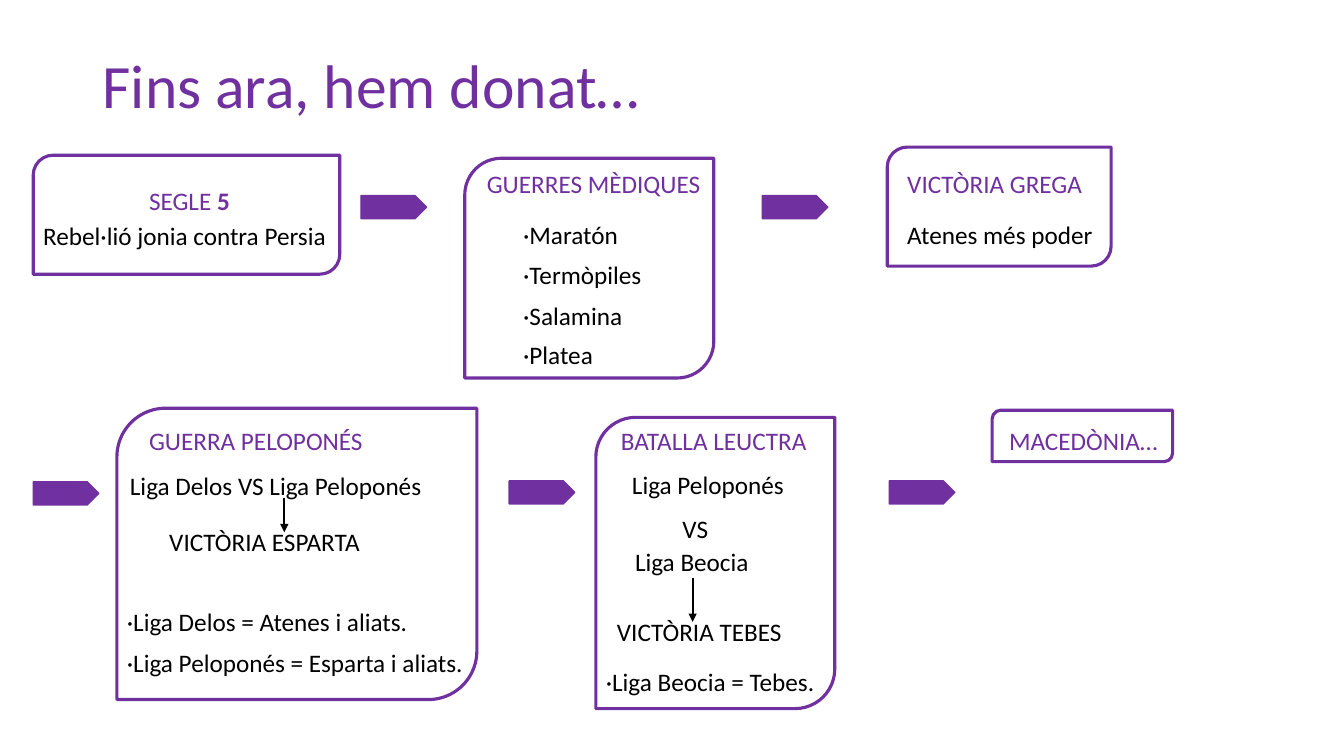
from dataclasses import dataclass

from lxml import etree
from pptx import Presentation
from pptx.dml.color import RGBColor
from pptx.enum.shapes import MSO_CONNECTOR, MSO_SHAPE
from pptx.enum.text import MSO_ANCHOR, MSO_AUTO_SIZE
from pptx.oxml.ns import qn
from pptx.util import Inches, Pt

STRAIGHT = MSO_CONNECTOR.STRAIGHT
FRAME = MSO_SHAPE.ROUND_2_DIAG_RECTANGLE
PENTAGON = MSO_SHAPE.PENTAGON
TOP, MIDDLE = MSO_ANCHOR.TOP, MSO_ANCHOR.MIDDLE
FIT, NO_FIT = MSO_AUTO_SIZE.SHAPE_TO_FIT_TEXT, MSO_AUTO_SIZE.NONE


@dataclass(frozen=True)
class Theme:
    font: str = "Calibri"
    purple: RGBColor = RGBColor(0x70, 0x30, 0xA0)
    black: RGBColor = RGBColor(0, 0, 0)
    title_size: int = 44
    body_size: int = 18


theme = Theme()
prs = Presentation()
prs.slide_width, prs.slide_height = Inches(13.33), Inches(7.5)
slide = prs.slides.add_slide(prs.slide_layouts[6])
shapes = slide.shapes


def add_text(text, left, top, width, height=0.4, size=theme.body_size,
             color=theme.black, bold_end="", anchor=TOP, fit=FIT, spacing=1.0):
    """Write one line of text, optionally ending in a bold part."""
    box = shapes.add_textbox(Inches(left), Inches(top), Inches(width), Inches(height))
    frame = box.text_frame
    frame.word_wrap = True
    frame.auto_size = fit
    frame.vertical_anchor = anchor
    paragraph = frame.paragraphs[0]
    paragraph.line_spacing = spacing
    for part in filter(None, (text, bold_end)):
        run = paragraph.add_run()
        run.text = part
        run.font.name = theme.font
        run.font.size = Pt(size)
        run.font.color.rgb = color
        if part == bold_end:
            run.font.bold = True


def add_purple_shape(kind, left, top, width, height, line_width, filled):
    shape = shapes.add_shape(kind, Inches(left), Inches(top), Inches(width), Inches(height))
    shape.shadow.inherit = False
    shape.line.color.rgb = theme.purple
    shape.line.width = Pt(line_width)
    if filled:
        shape.fill.solid()
        shape.fill.fore_color.rgb = theme.purple
    else:
        shape.fill.background()


add_text("Fins ara, hem donat…", 0.92, 0.4, 11.5, 0.95, size=theme.title_size,
         color=theme.purple, anchor=MIDDLE, fit=NO_FIT, spacing=0.9)

# Event frames
for left, top, width, height in [
    (0.33, 1.54, 3.04, 1.18),
    (4.61, 1.57, 2.47, 2.18),
    (8.8, 1.46, 2.22, 1.18),
    (1.16, 4.05, 3.57, 2.89),
    (5.91, 4.14, 2.37, 2.89),
    (9.84, 4.07, 1.79, 0.51),
]:
    add_purple_shape(FRAME, left, top, width, height, 2.25, filled=False)

# Steps from one event to the next
for left, top in [(3.58, 1.94), (7.56, 1.94), (0.33, 4.78), (5.05, 4.77), (8.82, 4.77)]:
    add_purple_shape(PENTAGON, left, top, 0.65, 0.23, 1, filled=True)

# Event headings
add_text("SEGLE ", 1.38, 1.79, 1.07, color=theme.purple, bold_end="5")
for heading, left, top, width in [
    ("GUERRES MÈDIQUES", 4.73, 1.62, 2.95),
    ("VICTÒRIA GREGA", 8.9, 1.62, 2.03),
    ("GUERRA PELOPONÉS", 1.38, 4.17, 2.37),
    ("BATALLA LEUCTRA", 6.06, 4.17, 2.37),
    ("MACEDÒNIA…", 9.91, 4.17, 2.37),
]:
    add_text(heading, left, top, width, color=theme.purple)

# Event details
for detail, left, top, width in [
    ("Rebel·lió jonia contra Persia", 0.33, 2.14, 3.04),
    ("·Maratón", 5.09, 2.13, 1.57),
    ("·Termòpiles", 5.09, 2.52, 1.57),
    ("·Salamina", 5.09, 2.93, 1.57),
    ("·Platea", 5.09, 3.32, 1.57),
    ("Atenes més poder", 8.9, 2.13, 3.04),
    ("Liga Delos VS Liga Peloponés", 1.19, 4.62, 3.31),
    ("VICTÒRIA ESPARTA", 1.58, 5.17, 3.31),
    ("·Liga Delos = Atenes i aliats.", 1.16, 5.97, 3.31),
    ("·Liga Peloponés = Esparta i aliats.", 1.16, 6.37, 3.57),
    ("Liga Peloponés", 6.17, 4.61, 1.8),
    ("VS", 6.67, 5.04, 1.8),
    ("Liga Beocia", 6.2, 5.37, 1.8),
    ("VICTÒRIA TEBES", 6.02, 6.07, 3.31),
    ("·Liga Beocia = Tebes.", 5.91, 6.56, 3.31),
]:
    add_text(detail, left, top, width)

# Arrows from the rivals to the winner
for x, start, end in [(2.82, 4.94, 5.28), (6.87, 5.73, 6.17)]:
    outcome = shapes.add_connector(STRAIGHT, Inches(x), Inches(start), Inches(x), Inches(end))
    outcome.line.color.rgb = theme.black
    outcome.line.width = Pt(1.5)
    etree.SubElement(outcome.line._get_or_add_ln(), qn("a:tailEnd"), type="triangle")
    etree.SubElement(outcome._element.spPr, qn("a:effectLst"))

prs.save("out.pptx")
